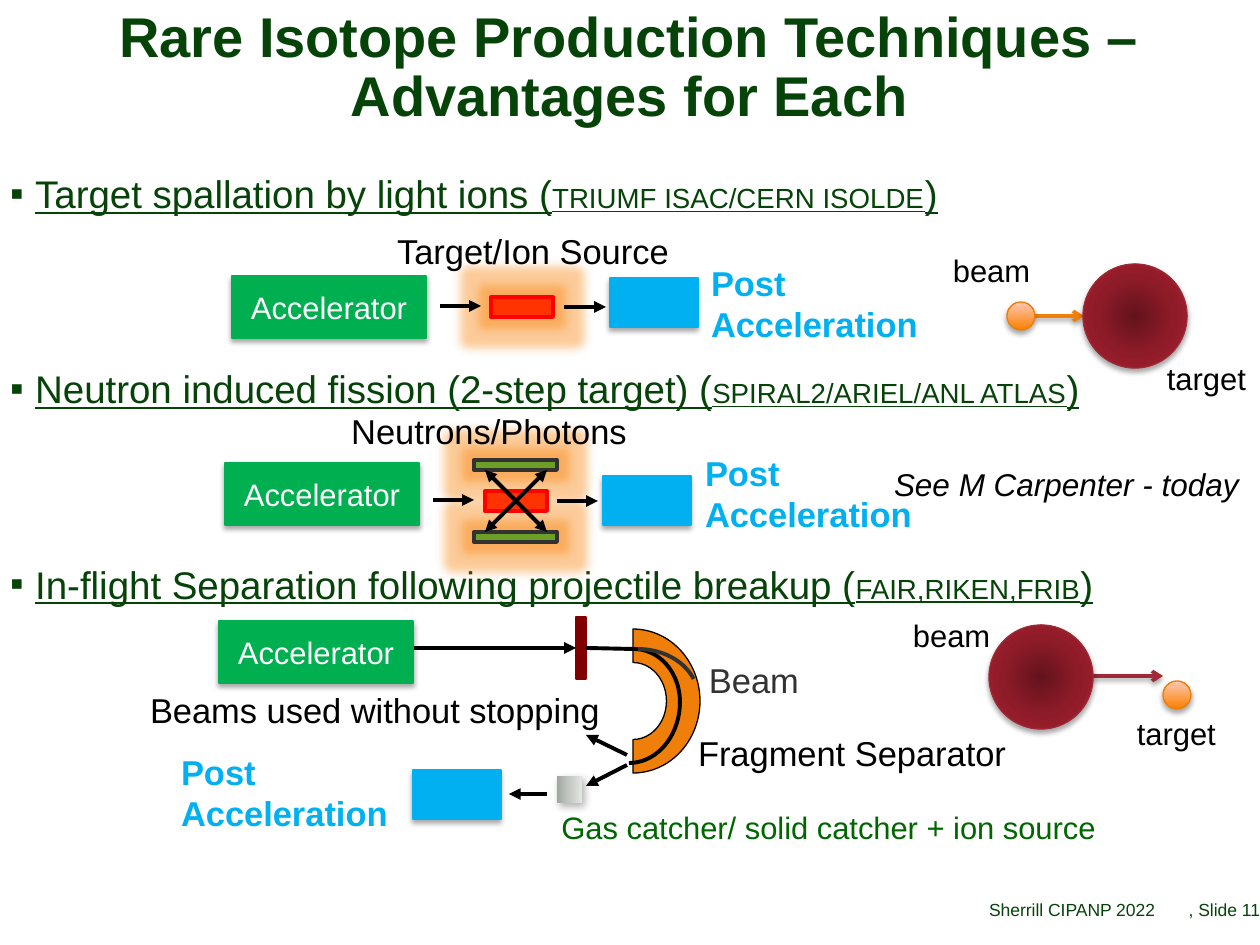
import pptx
import pptx.util
import pptx.dml.color
import pptx.enum.shapes
import pptx.enum.text
import pptx.oxml
import pptx.oxml.ns
from lxml import etree

PX = 914400 / 126
SHAPE = pptx.enum.shapes.MSO_SHAPE
ALIGN = pptx.enum.text.PP_ALIGN
ANCHOR = pptx.enum.text.MSO_ANCHOR
NS = 'xmlns:a="http://schemas.openxmlformats.org/drawingml/2006/main"'

THEME = {
    "font": "Arial", "dark": "064308", "black": "000000", "white": "FFFFFF",
    "blue": "00B0F0", "green": "00B050", "red": "FF0000", "hot": "FF3300",
    "olive": "6B9F25", "gray": "323232", "orange": "F07F09", "maroon": "800000",
    "crimson": "9F2936", "note": "006600", "ball_line": "F07C03",
    "title": 32, "body": 22, "small": 15.8, "label": 19.7, "caption": 17.7,
    "remark": 18, "footer": 10, "heavy": 2.25, "thin": 0.75, "beam": 2,
}
BALL = ([(0, "F97F00"), (100, "FFC9B5")], '<a:lin ang="16200000" scaled="0"/>')
NUCLEUS = ([(0, "63131C"), (50, "8D1B28"), (100, "A8202F")],
           '<a:path path="circle"><a:fillToRect l="50000" t="50000" r="50000" b="50000"/></a:path>')
CATCHER = ([(0, "9EA79E"), (50, "C4C9C4"), (100, "E3E5E3")], '<a:lin ang="0" scaled="0"/>')
# Effects: blur, distance (pt), direction (degrees), opacity (%)
SHADOW, LINE_SHADOW, CATCHER_SHADOW = (3.1, 1.8, 90, 35), (3.1, 1.6, 90, 38), (4.5, 2.6, 53, 30)

# Content; all lengths in px
TITLE = "Rare Isotope Production Techniques – Advantages for Each"
METHODS = [
    ("Target spallation by light ions (", "TRIUMF ISAC/CERN ISOLDE", ")"),
    ("Neutron induced fission (2-step target) (", "SPIRAL2/ARIEL/ANL ATLAS", ")"),
    ("In-flight Separation following projectile breakup (", "FAIR,RIKEN,FRIB", ")"),
]
# Accelerator corner, post-accelerator corner, its label corner
STAGES = [((232, 276), (610, 278), (698, 256)),
          ((225, 463), (603, 476), (692, 446)),
          ((219, 621), (413, 770), (168, 745))]
# Text, box, size, colour, alignment, wrap
LABELS = [
    ("Target/Ion Source", (381, 224, 301, 54), "label", "black", ALIGN.RIGHT, False),
    ("Neutrons/Photons", (335, 404, 305, 54), "label", "black", ALIGN.RIGHT, False),
    ("Fragment Separator", (685, 726, 362, 54), "label", "black", ALIGN.LEFT, True),
    ("Beam", (696, 653, 116, 54), "label", "gray", ALIGN.LEFT, False),
    ("Beams used without stopping", (137, 683, 558, 54), "label", "black", ALIGN.LEFT, True),
    ("Gas catcher/ solid catcher + ion source", (542, 803, 567, 50), "caption", "note",
     ALIGN.RIGHT, False),
    ("beam", (940, 246, 103, 50), "caption", "black", ALIGN.LEFT, False),
    ("target", (1154, 354, 106, 50), "caption", "black", ALIGN.LEFT, False),
    ("beam", (900, 611, 103, 50), "caption", "black", ALIGN.LEFT, False),
    ("target", (1124, 709, 106, 50), "caption", "black", ALIGN.LEFT, False),
]
ARROWS = [
    ((440, 306), (481, 306)), ((564, 307), (606, 307)),
    ((433, 500), (474, 500)), ((557, 501), (598, 501)),
    ((627, 765), (586, 786)), ((627, 755), (586, 735)), ((547, 794), (509, 794)),
]
CROSS = (516, 501)
# Ellipse centre, radii, start and end angle, colour
TRACKS = [((634, 702), (46, 53), 270, 0, "black"), ((629, 702), (51, 61), 0, 90, "black"),
          ((638, 697), (60, 48), 270, 342, "gray")]

presentation = pptx.Presentation()
presentation.slide_width, presentation.slide_height = pptx.util.Inches(10), pptx.util.Inches(7.5)
slide = presentation.slides.add_slide(presentation.slide_layouts[1])


def emu(*lengths):
    return [round(length * PX) for length in lengths]


def rgb(name):
    return pptx.dml.color.RGBColor.from_string(THEME[name])


def set_effect(properties, xml):
    effects = properties.find(pptx.oxml.ns.qn("a:effectLst"))
    if effects is None:
        effects = etree.SubElement(properties, pptx.oxml.ns.qn("a:effectLst"))
    if xml:
        effects.append(pptx.oxml.parse_xml(xml))


def shadow_xml(blur, distance, direction, opacity):
    return (f'<a:outerShdw {NS} blurRad="{round(blur * 12700)}" dist="{round(distance * 12700)}" '
            f'dir="{direction * 60000}" rotWithShape="0"><a:srgbClr val="000000">'
            f'<a:alpha val="{opacity * 1000}"/></a:srgbClr></a:outerShdw>')


def glow_xml():
    return (f'<a:glow {NS} rad="139700"><a:srgbClr val="{THEME["orange"]}"><a:satMod val="175000"/>'
            f'<a:alpha val="40000"/></a:srgbClr></a:glow>')


def style_runs(paragraph, size, color, bold=False, italic=False, underline=None):
    for run in paragraph.runs:
        font = run.font
        font.name, font.size, font.color.rgb = THEME["font"], pptx.util.Pt(THEME[size]), rgb(color)
        font.bold, font.italic, font.underline = bold, italic, underline


def set_frame(text_frame, insets, anchor=ANCHOR.TOP, wrap=True):
    (text_frame.margin_left, text_frame.margin_top,
     text_frame.margin_right, text_frame.margin_bottom) = emu(*insets)
    text_frame.vertical_anchor, text_frame.word_wrap = anchor, wrap
    text_frame.auto_size = pptx.enum.text.MSO_AUTO_SIZE.NONE


def place(shape, *box):
    shape.left, shape.top, shape.width, shape.height = emu(*box)


def add_label(text, box, size, color, align=ALIGN.LEFT, wrap=True, insets=(13, 6, 13, 6),
              anchor=ANCHOR.TOP, spacing=None, **style):
    text_frame = slide.shapes.add_textbox(*emu(*box)).text_frame
    set_frame(text_frame, insets, anchor, wrap)
    text_frame.text = text
    paragraph = text_frame.paragraphs[0]
    paragraph.alignment, paragraph.line_spacing = align, spacing
    style_runs(paragraph, size, color, **style)


def add_part(kind, box, fill=None, line=None, weight="thin", effect=None):
    shape = slide.shapes.add_shape(kind, *emu(*box))
    shape.shadow.inherit = False
    if isinstance(fill, tuple):
        stops, direction = fill
        shape.fill.gradient()
        gradient = shape._element.spPr.find(pptx.oxml.ns.qn("a:gradFill"))
        stop_xml = "".join(f'<a:gs pos="{position * 1000}"><a:srgbClr val="{color}"/></a:gs>'
                           for position, color in stops)
        gradient.getparent().replace(gradient, pptx.oxml.parse_xml(
            f'<a:gradFill {NS} rotWithShape="1"><a:gsLst>{stop_xml}</a:gsLst>{direction}</a:gradFill>'))
    elif fill:
        shape.fill.solid()
        shape.fill.fore_color.rgb = rgb(fill)
    else:
        shape.fill.background()
    if line:
        shape.line.color.rgb, shape.line.width = rgb(line), pptx.util.Pt(THEME[weight])
    else:
        shape.line.fill.background()
    set_effect(shape._element.spPr, effect)
    return shape


def add_line(start, end, color="black", weight="heavy", head="triangle", effect=None):
    line = slide.shapes.add_connector(pptx.enum.shapes.MSO_CONNECTOR.STRAIGHT, *emu(*start, *end))
    line.line.color.rgb, line.line.width = rgb(color), pptx.util.Pt(THEME[weight])
    if head:
        etree.SubElement(line.line._get_or_add_ln(), pptx.oxml.ns.qn("a:tailEnd"), type=head)
    set_effect(line._element.spPr, effect)
    return line


# Title and method list
title, body = slide.placeholders
place(title, 10, 6, 1239, 126)
set_frame(title.text_frame, (8, 3, 8, 3), ANCHOR.MIDDLE)
title.text_frame.text = TITLE
heading = title.text_frame.paragraphs[0]
heading.alignment, heading.line_spacing = ALIGN.CENTER, 0.88
style_runs(heading, "title", "dark", bold=True)

place(body, 10, 147, 1250, 693)
set_frame(body.text_frame, (0, 0, 0, 0))
for index, parts in enumerate(METHODS):
    paragraph = body.text_frame.paragraphs[0] if index == 0 else body.text_frame.add_paragraph()
    paragraph.line_spacing = 1.5
    paragraph.space_before = pptx.util.Pt(72 if index else 0)
    properties = paragraph._p.get_or_add_pPr()
    properties.set("marL", "182880")
    properties.set("indent", "-182880")
    etree.SubElement(properties, pptx.oxml.ns.qn("a:buChar"), char="▪")
    for part in parts:
        paragraph.add_run().text = part
    style_runs(paragraph, "body", "dark", underline=True)
    paragraph.runs[1].font.size = pptx.util.Pt(THEME["small"])

# Beam and target sketches: beam particle on nucleus, then nucleus on particle
add_line((1034, 316), (1084, 316), "orange", "beam", "arrow", shadow_xml(*LINE_SHADOW))
add_line((1092, 676), (1163, 676), "crimson", "beam", "arrow", shadow_xml(*LINE_SHADOW))
for ball, nucleus in [((1007, 302), (1083, 264)), ((1163, 681), (989, 625))]:
    add_part(SHAPE.OVAL, (*ball, 28, 28), BALL, "ball_line", effect=shadow_xml(*SHADOW))
    add_part(SHAPE.OVAL, (*nucleus, 104, 104), NUCLEUS, "crimson", effect=shadow_xml(*SHADOW))

# Targets, production foil, separator magnet and catcher
add_part(SHAPE.RECTANGLE, (491, 297, 62, 20), "hot", "red", "heavy", glow_xml())
for top in (460, 532):
    add_part(SHAPE.RECTANGLE, (474, top, 83, 10), "olive", "gray", "heavy", glow_xml())
add_part(SHAPE.RECTANGLE, (485, 491, 62, 20), "hot", "red", "heavy")
foil = add_part(SHAPE.RECTANGLE, (576, 617, 10, 62), "maroon", "maroon")
magnet = add_part(SHAPE.BLOCK_ARC, (566, 629, 134, 144), "orange", "black")
for index, value in enumerate((270 * 0.6, 90 * 0.6, 0.25)):
    magnet.adjustments[index] = value
add_part(SHAPE.RECTANGLE, (557, 776, 25, 27), CATCHER, effect=shadow_xml(*CATCHER_SHADOW))

# Arrows and beam tracks
for start, end in ARROWS:
    add_line(start, end)
for x in (-31, 31):
    for y in (-31, 31):
        add_line(CROSS, (CROSS[0] + x, CROSS[1] + y))
add_line((413, 648), (576, 648)).end_connect(foil, 1)
add_line((586, 648), (634, 649), head=None).begin_connect(foil, 3)
for (x, y), (across, down), start, end, color in TRACKS:
    track = add_part(SHAPE.ARC, (x - across, y - down, 2 * across, 2 * down), None, color, "heavy")
    track.adjustments[0], track.adjustments[1] = start * 0.6, end * 0.6

# Accelerators and post-acceleration
for accelerator, post, post_label in STAGES:
    box = add_part(SHAPE.RECTANGLE, (*accelerator, 194, 62), "green", "green",
                   effect=shadow_xml(*SHADOW))
    box.text_frame.text = "Accelerator"
    box.text_frame.paragraphs[0].alignment = ALIGN.CENTER
    style_runs(box.text_frame.paragraphs[0], "caption", "white")
    add_part(SHAPE.RECTANGLE, (*post, 88, 49), "blue", "blue", effect=shadow_xml(*SHADOW))
    add_label("Post Acceleration", (*post_label, 268, 96), "label", "blue", bold=True)

# Labels, remark and footer
for label in LABELS:
    add_label(*label)
add_label("See M Carpenter - today", (881, 459, 373, 50), "remark", "black", wrap=False, italic=True)
for text, box in [("Sherrill CIPANP 2022", (756, 876, 399, 50)), (", Slide 11", (1155, 876, 105, 50))]:
    add_label(text, box, "footer", "dark", ALIGN.RIGHT, insets=(0, 0, 0, 6),
              anchor=ANCHOR.BOTTOM, spacing=0.9)

presentation.save("out.pptx")
